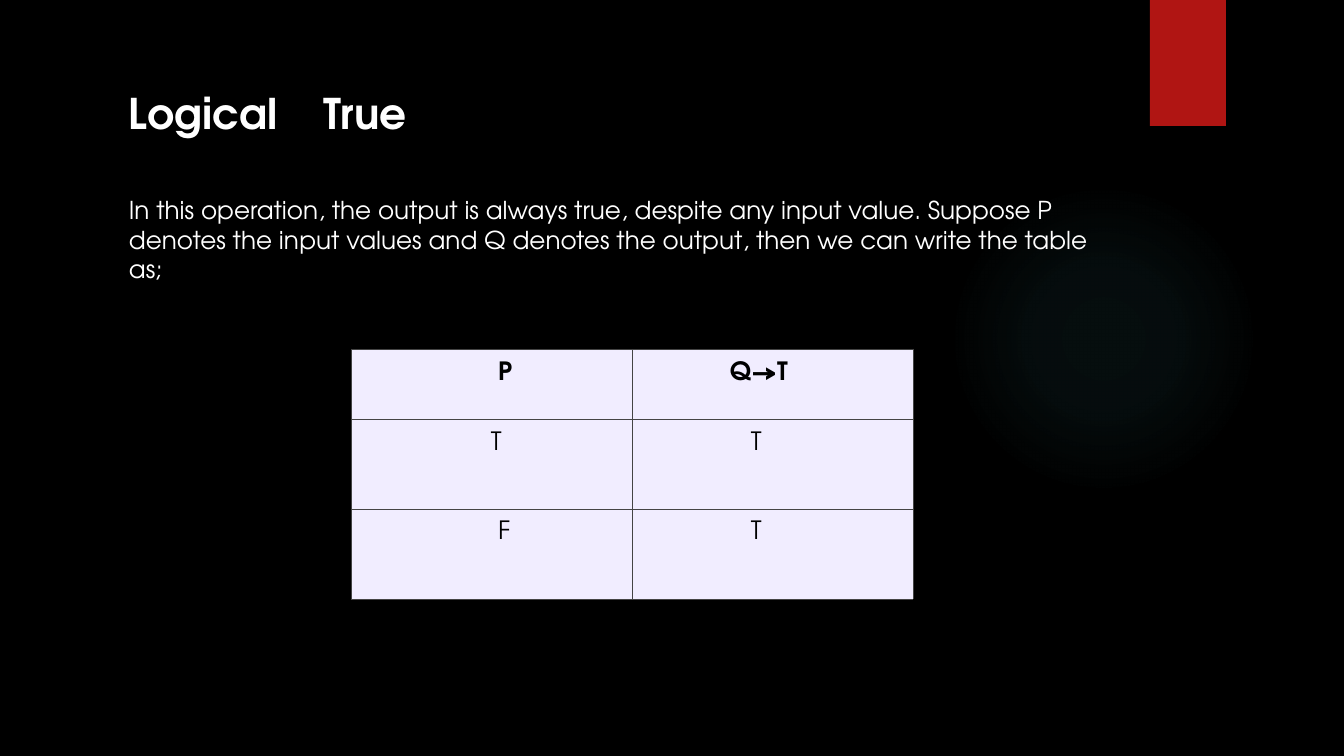
"""Build the slide that explains the logical true operation with a truth table."""
from lxml import etree
from pptx import Presentation
from pptx.dml.color import RGBColor
from pptx.enum.shapes import MSO_SHAPE
from pptx.oxml import parse_xml
from pptx.oxml.ns import nsdecls, qn
from pptx.util import Emu, Pt

RECTANGLE, OVAL = MSO_SHAPE.RECTANGLE, MSO_SHAPE.OVAL
FONT = "TeX Gyre Adventor"
PX = 914400 / 100.8

TITLE = "Logical\tTrue"
BODY = ("In this operation, the output is always true, despite any input value. "
        "Suppose P denotes the input values and Q denotes the output, "
        "then we can write the table as;")
TRUTH_ROWS = [
    [("P", 140), ("Q→T", 91)],
    [("T", 133), ("T", 112)],
    [("F", 140), ("T", 112)],
]
ROW_HEIGHTS = [70, 90, 90]
COLUMN_WIDTH = 281
TABLE_LEFT, TABLE_TOP = 351, 349
CELL_INSET = 7
GLOW_STOPS = [(0, 7), (36, 6), (69, 0)]


def px(length):
    return Emu(round(length * PX))


def color(value):
    return RGBColor.from_string(value)


def style(para, size, line_height, ink, bold=False):
    para.line_spacing = Pt(line_height)
    font = para.font
    font.name, font.size, font.bold = FONT, Pt(size), bold
    font.color.rgb = color(ink)


def add_shape(page, kind, left, top, width, height, fill):
    shape = page.shapes.add_shape(kind, px(left), px(top), px(width), px(height))
    shape.shadow.inherit = False
    shape.line.fill.background()
    shape.fill.solid()
    shape.fill.fore_color.rgb = color(fill)
    return shape


def add_glow(page):
    glow = add_shape(page, OVAL, 949, 184, 310, 310, "50B9C1")
    stops = "".join(
        f'<a:gs pos="{place * 1000}"><a:srgbClr val="50B9C1">'
        f'<a:alpha val="{alpha * 1000}"/></a:srgbClr></a:gs>'
        for place, alpha in GLOW_STOPS)
    gradient = parse_xml(
        f'<a:gradFill {nsdecls("a")}><a:gsLst>{stops}</a:gsLst><a:path path="circle">'
        '<a:fillToRect l="50000" t="50000" r="50000" b="50000"/></a:path></a:gradFill>')
    properties = glow._element.spPr
    properties.replace(properties.find(qn("a:solidFill")), gradient)


def add_text(page, text, top, height):
    box = page.shapes.add_textbox(px(119), px(top), px(985), px(height))
    box.text_frame.word_wrap = True
    para = box.text_frame.paragraphs[0]
    para.text = text
    return para


def add_tab(para, position):
    tabs = etree.SubElement(para._p.get_or_add_pPr(), qn("a:tabLst"))
    etree.SubElement(tabs, qn("a:tab"), pos=str(px(position)), algn="l")


def add_borders(cell, bottom_width):
    properties = cell._tc.get_or_add_tcPr()
    widths = {"lnL": 0.3, "lnR": 0.3, "lnT": 0.3, "lnB": bottom_width}
    for index, (side, width) in enumerate(widths.items()):
        properties.insert(index, parse_xml(
            f'<a:{side} {nsdecls("a")} w="{Pt(width)}"><a:solidFill>'
            f'<a:srgbClr val="444444"/></a:solidFill></a:{side}>'))


def add_truth_table(page):
    columns = len(TRUTH_ROWS[0])
    table = page.shapes.add_table(
        len(TRUTH_ROWS), columns, px(TABLE_LEFT), px(TABLE_TOP),
        px(columns * COLUMN_WIDTH), px(sum(ROW_HEIGHTS))).table
    table.horz_banding = False
    for column in table.columns:
        column.width = px(COLUMN_WIDTH)
    last = len(TRUTH_ROWS) - 1
    for row, values in enumerate(TRUTH_ROWS):
        table.rows[row].height = px(ROW_HEIGHTS[row])
        for column, (value, indent) in enumerate(values):
            cell = table.cell(row, column)
            cell.margin_left = px(CELL_INSET + indent)
            cell.margin_right = px(CELL_INSET)
            cell.margin_top = px(6)
            cell.fill.solid()
            cell.fill.fore_color.rgb = color("F1EDFF")
            add_borders(cell, 0.6 if row == last else 0.3)
            para = cell.text_frame.paragraphs[0]
            para.text = value
            style(para, 18, 21.4, "000000", bold=row == 0)


def main():
    deck = Presentation()
    deck.slide_width, deck.slide_height = px(1344), px(756)
    page = deck.slides.add_slide(deck.slide_layouts[6])
    page.background.fill.solid()
    page.background.fill.fore_color.rgb = color("000000")
    add_glow(page)
    add_shape(page, RECTANGLE, 1150, 0, 76, 126, "B01513")
    title = add_text(page, TITLE, 82, 62)
    add_tab(title, 195)
    style(title, 30.2, 36.2, "FFFFFF", bold=True)
    style(add_text(page, BODY, 190, 100), 17.6, 21.1, "FFFFFF")
    add_truth_table(page)
    deck.save("out.pptx")


if __name__ == "__main__":
    main()
